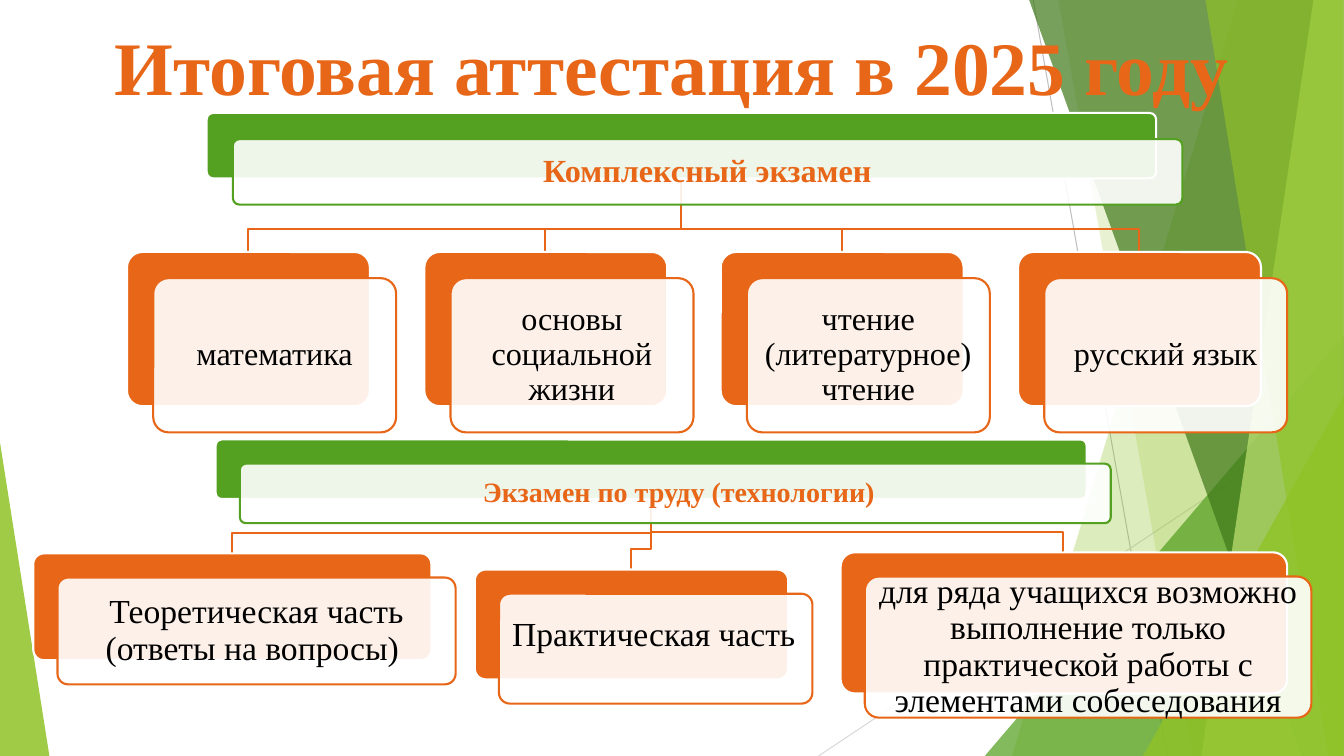
"""Build the slide about the final certification in 2025."""
from dataclasses import dataclass

from lxml import etree
from pptx import Presentation
from pptx.dml.color import RGBColor
from pptx.enum.shapes import MSO_CONNECTOR, MSO_SHAPE
from pptx.enum.text import MSO_ANCHOR, MSO_AUTO_SIZE, PP_ALIGN
from pptx.oxml.ns import qn
from pptx.util import Emu, Pt

PX = 9144
FONT = "Times New Roman"
ORANGE = RGBColor(0xE7, 0x66, 0x18)
GREEN = RGBColor(0x54, 0xA0, 0x21)
LIME = RGBColor(0x90, 0xC2, 0x26)
DARK = RGBColor(0x3F, 0x78, 0x19)
PALE = RGBColor(0xC0, 0xE4, 0x74)
GREY = RGBColor(0xBF, 0xBF, 0xBF)
LIGHT_GREY = RGBColor(0xD9, 0xD9, 0xD9)
WHITE = RGBColor(0xFF, 0xFF, 0xFF)
BLACK = RGBColor(0, 0, 0)
STRAIGHT = MSO_CONNECTOR.STRAIGHT
ROUNDED = MSO_SHAPE.ROUNDED_RECTANGLE
TRIANGLE = MSO_SHAPE.ISOSCELES_TRIANGLE
CENTER, LEFT = PP_ALIGN.CENTER, PP_ALIGN.LEFT
MIDDLE = MSO_ANCHOR.MIDDLE
NO_FIT = MSO_AUTO_SIZE.NONE


@dataclass
class Ray:
    start: tuple[int, int]
    end: tuple[int, int]
    color: RGBColor


@dataclass
class Facet:
    points: list[tuple[int, int]]
    color: RGBColor
    opacity: int


@dataclass
class Wedge:
    box: tuple[int, int, int, int]
    apex: int
    color: RGBColor
    opacity: int


@dataclass
class Card:
    left: int
    top: int
    width: int
    height: int
    text: str
    size: int
    accent: RGBColor = ORANGE
    ink: RGBColor = BLACK
    bold: bool = False
    align: PP_ALIGN = CENTER
    inset: int = 10
    foot: int = 10


@dataclass
class Tree:
    head: Card
    leaves: list[Card]
    shift: int
    drop: int


RAYS = [
    Ray((1025, 0), (1158, 750), GREY),
    Ray((1333, 403), (812, 750), LIGHT_GREY),
]
DECOR = [
    Facet([(1228, 0), (1333, 0), (1333, 750), (1004, 750)], LIME, 30),
    Facet([(1050, 0), (1333, 0), (1333, 750), (1183, 750)], LIME, 20),
    Wedge((977, 333, 356, 417), 1, GREEN, 72),
    Facet([(1021, 0), (1333, 0), (1333, 750), (1291, 750)], DARK, 70),
    Facet([(1303, 0), (1333, 0), (1333, 750), (1192, 750)], PALE, 70),
    Facet([(1196, 0), (1333, 0), (1333, 750), (1318, 750)], LIME, 65),
    Wedge((1134, 393, 199, 357), 1, LIME, 80),
    Wedge((0, 439, 49, 311), 0, LIME, 85),
]
SUBJECTS = ["математика", "основы социальной жизни",
            "чтение (литературное) чтение", "русский язык"]
TREES = [
    Tree(Card(205, 112, 942, 65, "Комплексный экзамен", 23, GREEN, ORANGE, True),
         [Card(126 + round(i * 294.67), 250, 241, 153, subject, 23)
          for i, subject in enumerate(SUBJECTS)], 26, 23),
    Tree(Card(214, 436, 864, 59, " Экзамен по труду (технологии)", 20,
              GREEN, ORANGE, True, inset=7, foot=7),
         [Card(33, 549, 395, 106, "Теоретическая часть (ответы на вопросы) ", 24),
          Card(471, 565, 311, 109, "Практическая часть", 24, align=LEFT, foot=36),
          Card(834, 548, 443, 140, "для ряда учащихся возможно выполнение только "
               "практической работы с элементами собеседования", 24)], 24, 20),
]


def assign(obj, values: dict) -> None:
    for name, value in values.items():
        setattr(obj, name, value)


def paint(shape, color: RGBColor, opacity: int = 100) -> None:
    shape.shadow.inherit = False
    shape.fill.solid()
    shape.fill.fore_color.rgb = color
    if opacity < 100:
        clr = shape.element.spPr.find(qn("a:solidFill"))[0]
        etree.SubElement(clr, qn("a:alpha"), val=str(opacity * 1000))


def stroke(shape, color: RGBColor, width: float = 1.5) -> None:
    shape.line.color.rgb = color
    shape.line.width = Pt(width)


def outline(s, points: list[tuple[int, int]], close: bool):
    builder = s.shapes.build_freeform(*points[0], scale=PX)
    builder.add_line_segments(points[1:], close=close)
    return builder.convert_to_shape()


def preset(s, kind: MSO_SHAPE, box: tuple[int, ...], adjustment: float):
    shape = s.shapes.add_shape(kind, *(Emu(v * PX) for v in box))
    shape.adjustments[0] = adjustment
    return shape


def draw_ray(s, ray: Ray) -> None:
    ends = (Emu(v * PX) for v in ray.start + ray.end)
    line = s.shapes.add_connector(STRAIGHT, *ends)
    stroke(line, ray.color, 0.75)
    etree.SubElement(line.element.spPr, qn("a:effectLst"))


def draw_decor(s, part: Facet | Wedge) -> None:
    if isinstance(part, Facet):
        shape = outline(s, part.points, True)
    else:
        shape = preset(s, TRIANGLE, part.box, part.apex)
    paint(shape, part.color, part.opacity)
    shape.line.fill.background()


def write(tf, text: str, frame: dict, para: dict, font: dict, ink: RGBColor) -> None:
    assign(tf, frame)
    p = tf.paragraphs[0]
    assign(p, para)
    r = p.add_run()
    r.text = text
    assign(r.font, {"name": FONT, **font})
    r.font.color.rgb = ink


def draw_card(s, card: Card, shift: int) -> None:
    size = (card.width, card.height)
    back = preset(s, ROUNDED, (card.left, card.top, *size), 0.1)
    paint(back, card.accent)
    stroke(back, WHITE)
    front = preset(s, ROUNDED, (card.left + shift, card.top + shift, *size), 0.1)
    paint(front, WHITE, 90)
    stroke(front, card.accent)
    inset = Emu(card.inset * PX)
    write(front.text_frame, card.text,
          {"word_wrap": True, "vertical_anchor": MIDDLE, "margin_left": inset,
           "margin_right": inset, "margin_top": inset,
           "margin_bottom": Emu(card.foot * PX)},
          {"alignment": card.align, "line_spacing": 0.9},
          {"size": Pt(card.size), "bold": card.bold}, card.ink)


def draw_tree(s, tree: Tree) -> None:
    head = tree.head
    trunk, base = head.left + head.width // 2, head.top + head.height
    for leaf in tree.leaves:
        x, bend = leaf.left + leaf.width // 2, leaf.top - tree.drop
        link = outline(s, [(trunk, base), (trunk, bend), (x, bend), (x, leaf.top)], False)
        link.shadow.inherit = False
        link.fill.background()
        stroke(link, ORANGE)
    for card in [head, *tree.leaves]:
        draw_card(s, card, tree.shift)


def draw_title(s) -> None:
    title = s.shapes.title
    title.element.getparent().append(title.element)
    box = zip(("left", "top", "width", "height"), (98, 14, 1137, 101))
    assign(title, {name: Emu(v * PX) for name, v in box})
    write(title.text_frame, "Итоговая аттестация в 2025 году",
          {"word_wrap": False, "auto_size": NO_FIT, "vertical_anchor": MIDDLE},
          {"alignment": CENTER}, {"size": Pt(54), "bold": True}, ORANGE)


def main() -> None:
    prs = Presentation()
    assign(prs, {"slide_width": Emu(12192000), "slide_height": Emu(750 * PX)})
    s = prs.slides.add_slide(prs.slide_layouts[5])
    for ray in RAYS:
        draw_ray(s, ray)
    for part in DECOR:
        draw_decor(s, part)
    draw_title(s)
    for tree in TREES:
        draw_tree(s, tree)
    prs.save("out.pptx")


if __name__ == "__main__":
    main()
